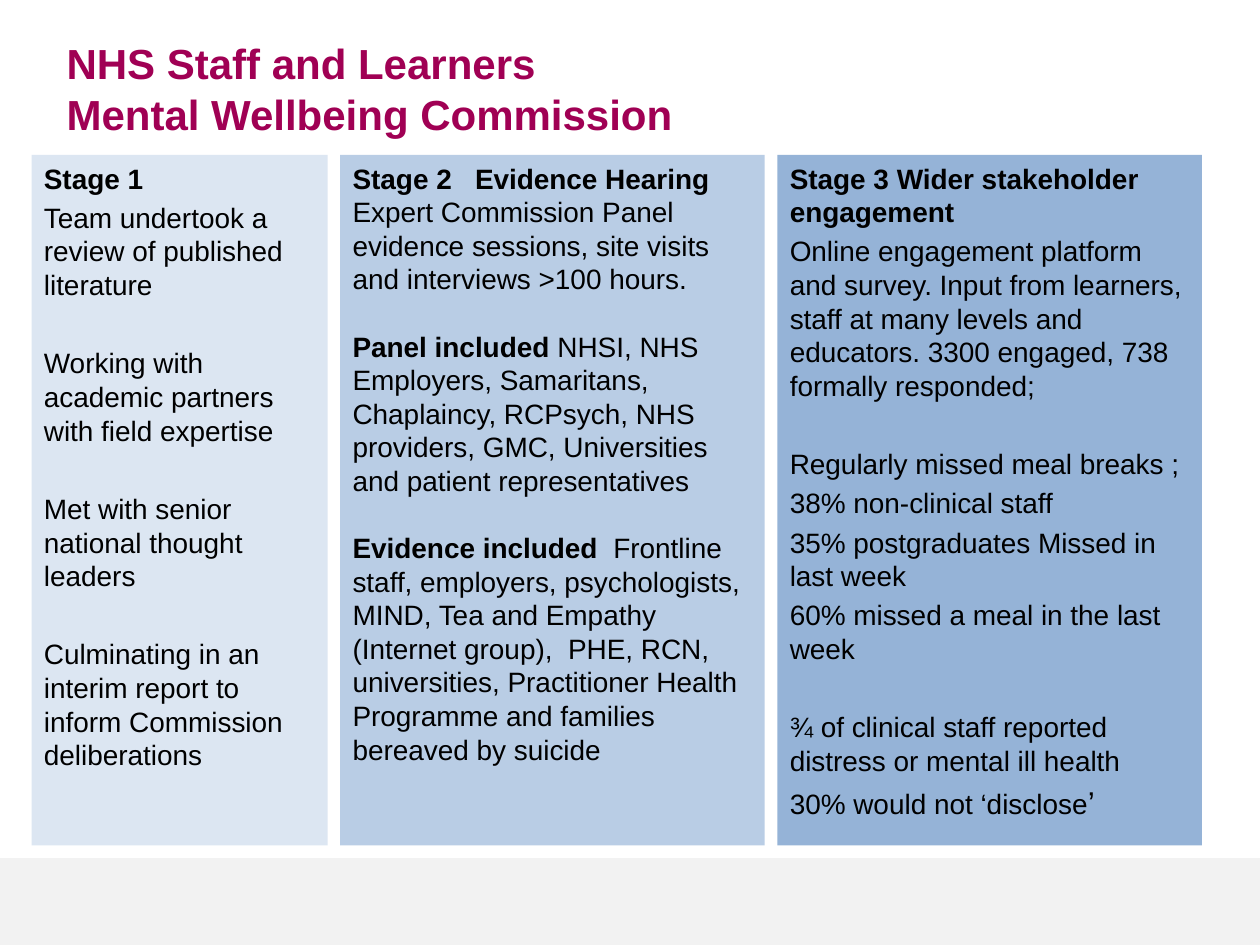
from dataclasses import dataclass

from pptx import Presentation
from pptx import util as u
from pptx.dml.color import RGBColor
from pptx.enum import shapes, text

PX = 9144  # 100 px to the inch


@dataclass(frozen=True)
class Theme:
    font: str = "Arial"
    title: str = "A00054"
    ink: str = "000000"
    footer: str = "F2F2F2"
    stages: tuple = ("DCE6F2", "B9CDE5", "95B3D7")
    title_size: int = 24
    body_size: int = 16
    quote_size: int = 18


THEME = Theme()
TIGHT, NEAR, STAGE2_GAP, GAP = 0, 3.2, 19.2, 25.6  # points before a paragraph

# Each paragraph is its space before, then (wording, bold, size) runs.
BODY, BOLD = (False, THEME.body_size), (True, THEME.body_size)

STAGE_1 = [
    (TIGHT, [("Stage 1", *BOLD)]),
    (NEAR, [("Team undertook a review of published literature", *BODY)]),
    (GAP, [("Working with academic partners with field expertise", *BODY)]),
    (GAP, [("Met with senior national thought leaders", *BODY)]),
    (GAP, [("Culminating in an interim report to inform Commission deliberations", *BODY)]),
]
STAGE_2 = [
    (TIGHT, [("Stage 2   Evidence Hearing", *BOLD)]),
    (TIGHT, [("Expert Commission Panel evidence sessions, site visits and "
              "interviews >100 hours.", *BODY)]),
    (STAGE2_GAP, [("Panel included ", *BOLD),
                  ("NHSI, NHS Employers, Samaritans, Chaplaincy, RCPsych, NHS providers, "
                   "GMC, Universities and patient representatives", *BODY)]),
    (STAGE2_GAP, [("Evidence included  ", *BOLD),
                  ("Frontline staff, employers, psychologists, MIND, Tea and Empathy "
                   "(Internet group),  PHE, RCN, universities, Practitioner Health "
                   "Programme and families bereaved by suicide", *BODY)]),
]
STAGE_3 = [
    (TIGHT, [("Stage 3 Wider stakeholder engagement", *BOLD)]),
    (NEAR, [("Online engagement platform and survey. Input from learners, staff at many "
             "levels and educators. 3300 engaged, 738 formally responded;", *BODY)]),
    (GAP, [("Regularly missed meal breaks ;", *BODY)]),
    (NEAR, [("38% non-clinical staff", *BODY)]),
    (NEAR, [("35% postgraduates Missed in last week", *BODY)]),
    (NEAR, [("60% missed a meal in the last week", *BODY)]),
    (GAP, [("¾ of clinical staff reported distress or mental ill health", *BODY)]),
    (NEAR, [("30% would not ‘disclose", *BODY), ("’", False, THEME.quote_size)]),
]


def emu(box):
    return [u.Emu(v * PX) for v in box]


def add_panel(slide, box, fill):
    sp = slide.shapes.add_shape(shapes.MSO_SHAPE.RECTANGLE, *emu(box))
    sp.shadow.inherit = False
    sp.fill.solid()
    sp.fill.fore_color.rgb = RGBColor.from_string(fill)
    sp.line.fill.background()
    return sp


def add_title(slide, box, wording):
    tf = slide.shapes.add_textbox(*emu(box)).text_frame
    tf.word_wrap = True
    p = tf.paragraphs[0]
    p.text = wording
    p.font.name, p.font.size, p.font.bold = THEME.font, u.Pt(THEME.title_size), True
    p.font.color.rgb = RGBColor.from_string(THEME.title)


def add_stage(slide, box, fill, paragraphs):
    tf = add_panel(slide, box, fill).text_frame
    tf.word_wrap = True
    tf.vertical_anchor = text.MSO_ANCHOR.TOP
    for i, (before, runs) in enumerate(paragraphs):
        p = tf.add_paragraph() if i else tf.paragraphs[0]
        p.alignment = text.PP_ALIGN.LEFT
        p.space_before = u.Pt(before)
        p.font.name = THEME.font
        p.font.color.rgb = RGBColor.from_string(THEME.ink)
        for wording, bold, size in runs:
            r = p.add_run()
            r.text = wording
            r.font.bold, r.font.size = bold, u.Pt(size)


def add_stages(slide, box):
    """Lay the stages side by side: a narrow one, then two wide ones."""
    left, top, width, height = box
    gap, narrow = 10, 235
    wide = (width - narrow - 2 * gap) // 2
    for w, fill, paragraphs in zip((narrow, wide, wide), THEME.stages,
                                   (STAGE_1, STAGE_2, STAGE_3)):
        add_stage(slide, (left, top, w, height), fill, paragraphs)
        left += w + gap


def main():
    prs = Presentation()
    prs.slide_width, prs.slide_height = emu((1000, 750))
    slide = prs.slides.add_slide(prs.slide_layouts[6])
    add_panel(slide, (0, 681, 1000, 69), THEME.footer)
    add_title(slide, (43, 25, 535, 74), "NHS Staff and Learners\vMental Wellbeing Commission")
    add_stages(slide, (25, 123, 930, 548))
    prs.save("out.pptx")


if __name__ == "__main__":
    main()
